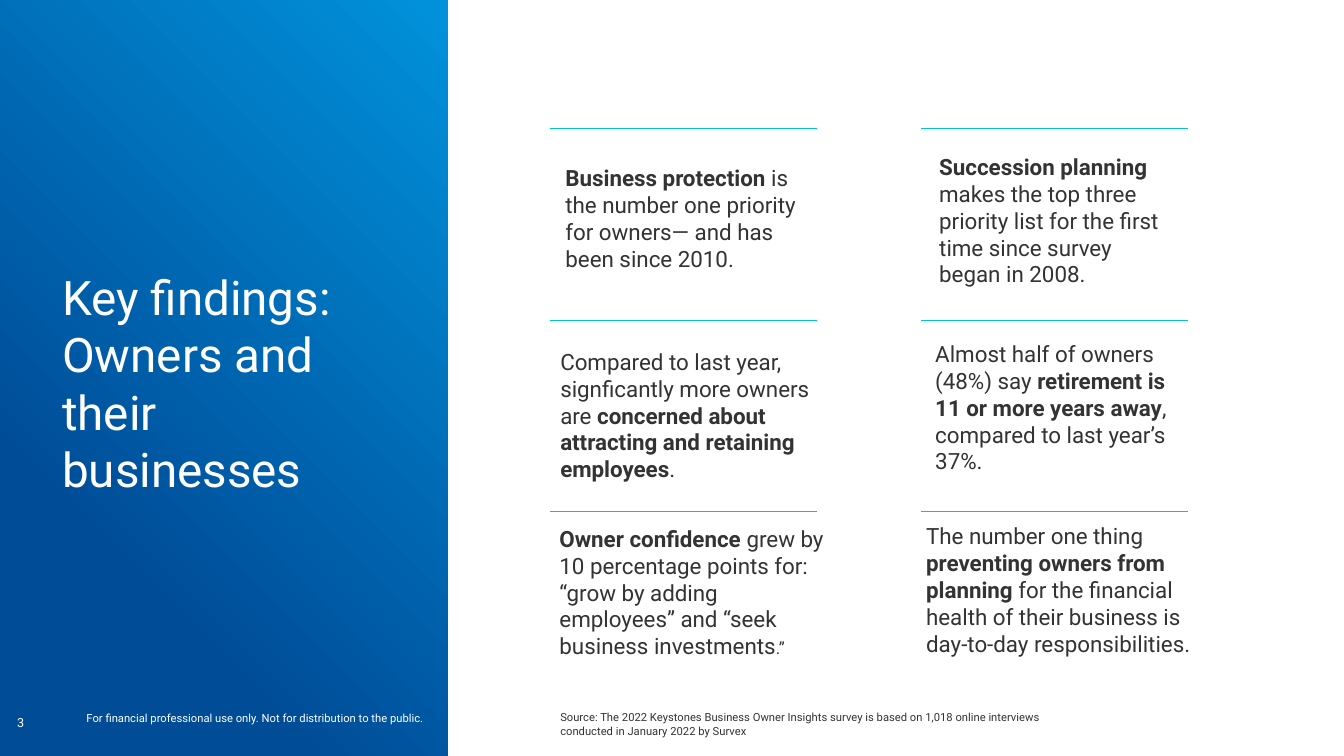
import pptx
import pptx.dml.color
import pptx.enum.shapes
import pptx.enum.text
import pptx.util
from lxml import etree

Cm = pptx.util.Cm

TITLE = "Key findings: Owners and their businesses"
PAGE_NUMBER = "3"
NOTICE = "For financial professional use only. Not for distribution to the public."
SOURCE = ("Source: The 2022 Keystones Business Owner Insights survey is based on "
          "1,018 online interviews conducted in January 2022 by Survex")

# Each finding: row, column, offset from its rule (x, y), width, runs (text, format)
FINDINGS = [
    (0, 0, 0.38, 0.89, 5.94, [
        ("Business protection ", {"bold": True}),
        ("is the number one priority for owners— and has been since 2010.", {})]),
    (0, 1, 0.45, 0.61, 5.94, [
        ("Succession planning ", {"bold": True}),
        ("makes the top three priority list for the first time since survey "
         "began in 2008.", {})]),
    (1, 0, 0.25, 0.7, 6.45, [
        ("Compared to last year, signficantly more owners are ", {}),
        ("concerned about attracting and retaining employees", {"bold": True}),
        (".", {})]),
    (1, 1, 0.35, 0.5, 5.97, [
        ("Almost half of owners (48%) say ", {}),
        ("retirement is 11 or more years away", {"bold": True}),
        (", compared to last year’s 37%.", {})]),
    (2, 0, 0.23, 0.34, 6.76, [
        ("Owner confidence ", {"bold": True}),
        ("grew by 10 percentage points for: “grow by adding employees” and "
         "“seek business investments", {}),
        (".”", {"size": 12})]),
    (2, 1, 0.12, 0.27, 6.96, [
        ("The number one thing ", {}),
        ("preventing owners from planning ", {"bold": True}),
        ("for the financial health of their business is day-to-day "
         "responsibilities.", {})]),
]

THEME = {
    "font": "Roboto",
    "white": "FFFFFF", "text": "333333", "rule": "00C4D9",
    "panel": [(0.25, "004C97"), (0.99, "0091DA")],
    "title": 34, "body": 16, "page": 9, "small": 8,
    "rule_width": 0.75,
}

SLIDE_WIDTH, SLIDE_HEIGHT = 33.87, 19.05
PANEL_WIDTH = 11.28
RULE_LEFT, RULE_TOP, RULE_LENGTH = 13.87, 3.25, 6.73
COLUMN_PITCH, ROW_PITCH = 9.35, 4.82
ROWS, COLUMNS = 3, 2
FINDING_HEIGHT = 3.7


def rgb(value):
    return pptx.dml.color.RGBColor.from_string(value)


def rule_origin(row, column):
    return RULE_LEFT + column * COLUMN_PITCH, RULE_TOP + row * ROW_PITCH


def add_text(slide, content, left, top, width, height, *, size, color,
             anchor=pptx.enum.text.MSO_ANCHOR.TOP):
    """Add a text box without insets; content is a string or (text, format) runs."""
    box = slide.shapes.add_textbox(Cm(left), Cm(top), Cm(width), Cm(height))
    frame = box.text_frame
    frame.word_wrap = True
    frame.vertical_anchor = anchor
    frame.margin_left = frame.margin_right = 0
    frame.margin_top = frame.margin_bottom = 0
    paragraph = frame.paragraphs[0]
    for text, style in [(content, {})] if isinstance(content, str) else content:
        run = paragraph.add_run()
        run.text = text
        run.font.name = THEME["font"]
        run.font.size = pptx.util.Pt(style.get("size", size))
        run.font.bold = style.get("bold", False)
        run.font.color.rgb = rgb(color)


def add_panel(slide):
    panel = slide.shapes.add_shape(pptx.enum.shapes.MSO_SHAPE.RECTANGLE,
                                   0, 0, Cm(PANEL_WIDTH), Cm(SLIDE_HEIGHT))
    panel.shadow.inherit = False
    panel.line.fill.background()
    panel.fill.gradient()
    panel.fill.gradient_angle = 45
    for stop, (position, color) in zip(panel.fill.gradient_stops, THEME["panel"]):
        stop.position = position
        stop.color.rgb = rgb(color)


def add_rule(slide, row, column):
    left, top = rule_origin(row, column)
    rule = slide.shapes.add_connector(
        pptx.enum.shapes.MSO_CONNECTOR.STRAIGHT,
        Cm(left), Cm(top), Cm(left + RULE_LENGTH), Cm(top))
    rule.line.color.rgb = rgb(THEME["rule"])
    rule.line.width = pptx.util.Pt(THEME["rule_width"])
    properties = rule._element.spPr
    etree.SubElement(properties, pptx.oxml.ns.qn("a:effectLst"))


def main():
    presentation = pptx.Presentation()
    presentation.slide_width = Cm(SLIDE_WIDTH)
    presentation.slide_height = Cm(SLIDE_HEIGHT)
    slide = presentation.slides.add_slide(presentation.slide_layouts[6])

    add_panel(slide)
    add_text(slide, TITLE, 1.57, 6.76, 8.61, 5.8,
             size=THEME["title"], color=THEME["white"])
    add_text(slide, PAGE_NUMBER, 0.43, 17.35, 1.17, 1.04, size=THEME["page"],
             color=THEME["white"], anchor=pptx.enum.text.MSO_ANCHOR.BOTTOM)

    for row in range(ROWS):
        for column in range(COLUMNS):
            add_rule(slide, row, column)
    for row, column, shift_x, shift_y, width, runs in FINDINGS:
        left, top = rule_origin(row, column)
        add_text(slide, runs, left + shift_x, top + shift_y, width, FINDING_HEIGHT,
                 size=THEME["body"], color=THEME["text"])

    add_text(slide, NOTICE, 2.18, 17.93, 9, 0.4,
             size=THEME["small"], color=THEME["white"])
    add_text(slide, SOURCE, 14.12, 17.91, 12.7, 0.7,
             size=THEME["small"], color=THEME["text"])
    presentation.save("out.pptx")


if __name__ == "__main__":
    main()
